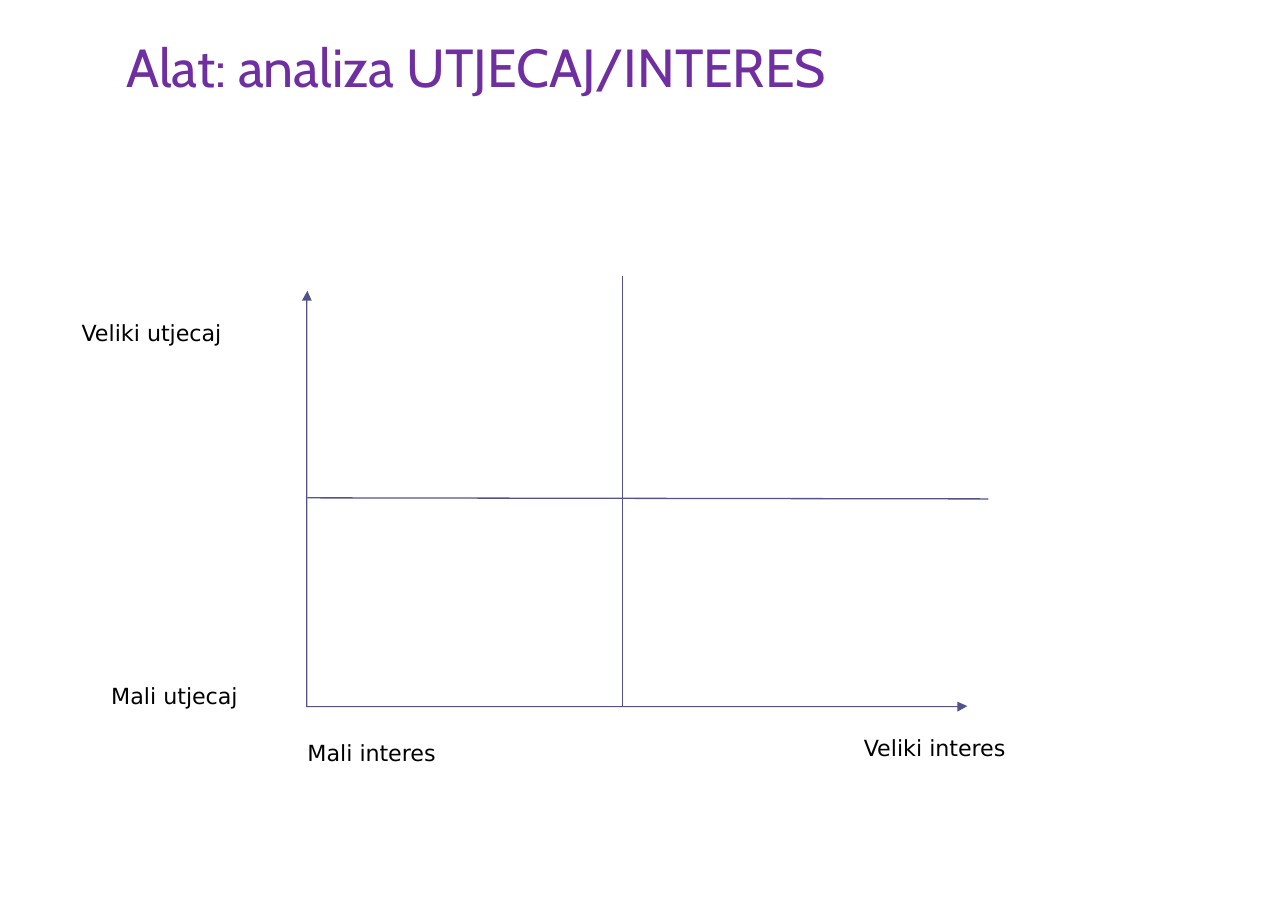
from pptx import Presentation, util as u
from pptx.dml.color import RGBColor
from pptx.enum import text

COLORS = {"title": "702FA0", "label": "000000", "axis": "525489"}
TITLE = {"name": "Cabin", "size": u.Pt(35)}
LABEL = {"name": "DejaVu Sans", "size": u.Pt(14.5)}


class MatrixSlide:
    def __init__(self, presentation):
        self.slide = presentation.slides.add_slide(presentation.slide_layouts[6])

    def text(self, box, words, style, color, insets=(0, 0.02), spacing=-5):
        shape = self.slide.shapes.add_textbox(*map(u.Inches, box))
        frame = shape.text_frame
        left_inset, top_inset = map(u.Inches, insets)
        frame_format = {
            "word_wrap": True,
            "auto_size": text.MSO_AUTO_SIZE.NONE,
            "vertical_anchor": text.MSO_ANCHOR.TOP,
            "margin_left": left_inset,
            "margin_top": top_inset,
            "margin_right": 0,
            "margin_bottom": 0,
        }
        for name, value in frame_format.items():
            setattr(frame, name, value)
        paragraph = frame.paragraphs[0]
        for word, word_spacing in zip(words, (0, spacing)):
            run = paragraph.add_run()
            run.text = word
            for name, value in style.items():
                setattr(run.font, name, value)
            run.font.color.rgb = RGBColor.from_string(COLORS[color])
            run._r.get_or_add_rPr().set("spc", str(word_spacing))

    def outline(self, paths, closed):
        paths = [[tuple(map(u.Inches, point)) for point in path] for path in paths]
        builder = self.slide.shapes.build_freeform(*paths[0][0])
        for number, (start, *points) in enumerate(paths):
            if number:
                builder.move_to(*start)
            builder.add_line_segments(points, close=closed)
        shape = builder.convert_to_shape()
        shape.shadow.inherit = False
        return shape

    def axes(self, points):
        shape = self.outline([points], closed=True)
        shape.fill.solid()
        shape.fill.fore_color.rgb = RGBColor.from_string(COLORS["axis"])
        shape.line.fill.background()

    def dividers(self, paths):
        shape = self.outline(paths, closed=False)
        shape.fill.background()
        shape.line.width = u.Pt(0.84)
        shape.line.color.rgb = RGBColor.from_string(COLORS["axis"])


def main():
    presentation = Presentation()
    presentation.slide_width = u.Inches(11.69)
    presentation.slide_height = u.Inches(8.27)
    matrix = MatrixSlide(presentation)

    matrix.text((0.32, 0, 11.05, 1.15), ("Alat: analiza ", "UTJECAJ/INTERES"),
                TITLE, "title", insets=(0.83, 0.31), spacing=-10)

    matrix.axes([
        (8.78, 6.41), (8.69, 6.37), (8.69, 6.41), (2.79, 6.41),
        (2.79, 2.73), (2.83, 2.73), (2.79, 2.64), (2.74, 2.73),
        (2.78, 2.73), (2.78, 6.42), (8.69, 6.42), (8.69, 6.46),
    ])
    matrix.dividers([
        [(5.65, 2.51), (5.65, 6.41)],
        [(2.79, 4.52), (8.97, 4.53)],
    ])

    labels = [
        (2.79, 6.69, "Mali ", "interes"),
        (0.74, 2.88, "Veliki ", "utjecaj"),
        (1.01, 6.17, "Mali ", "utjecaj"),
        (7.84, 6.65, "Veliki ", "interes"),
    ]
    for left, top, level, factor in labels:
        matrix.text((left, top, 1.4, 0.28), (level, factor), LABEL, "label")

    presentation.save("out.pptx")


if __name__ == "__main__":
    main()
